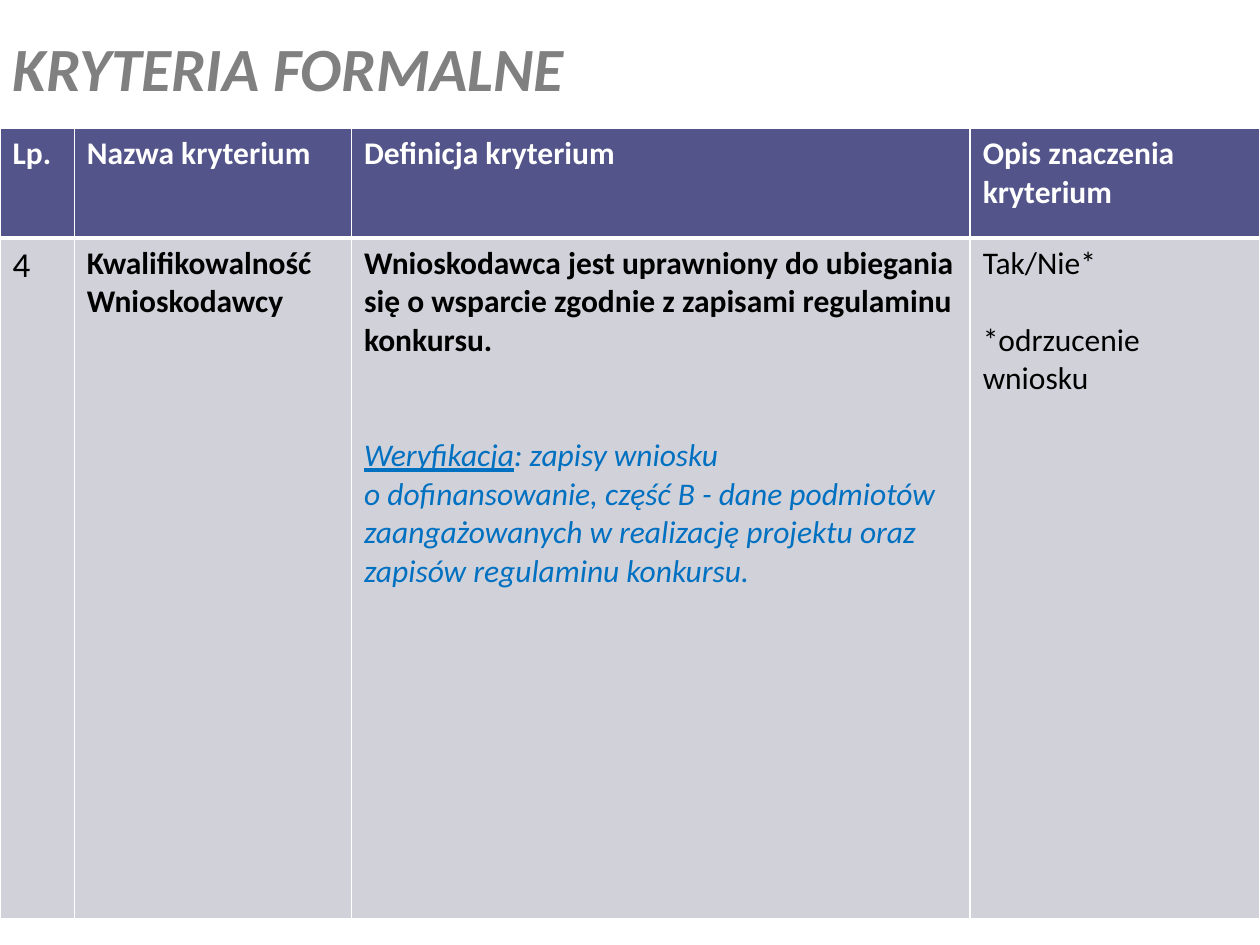
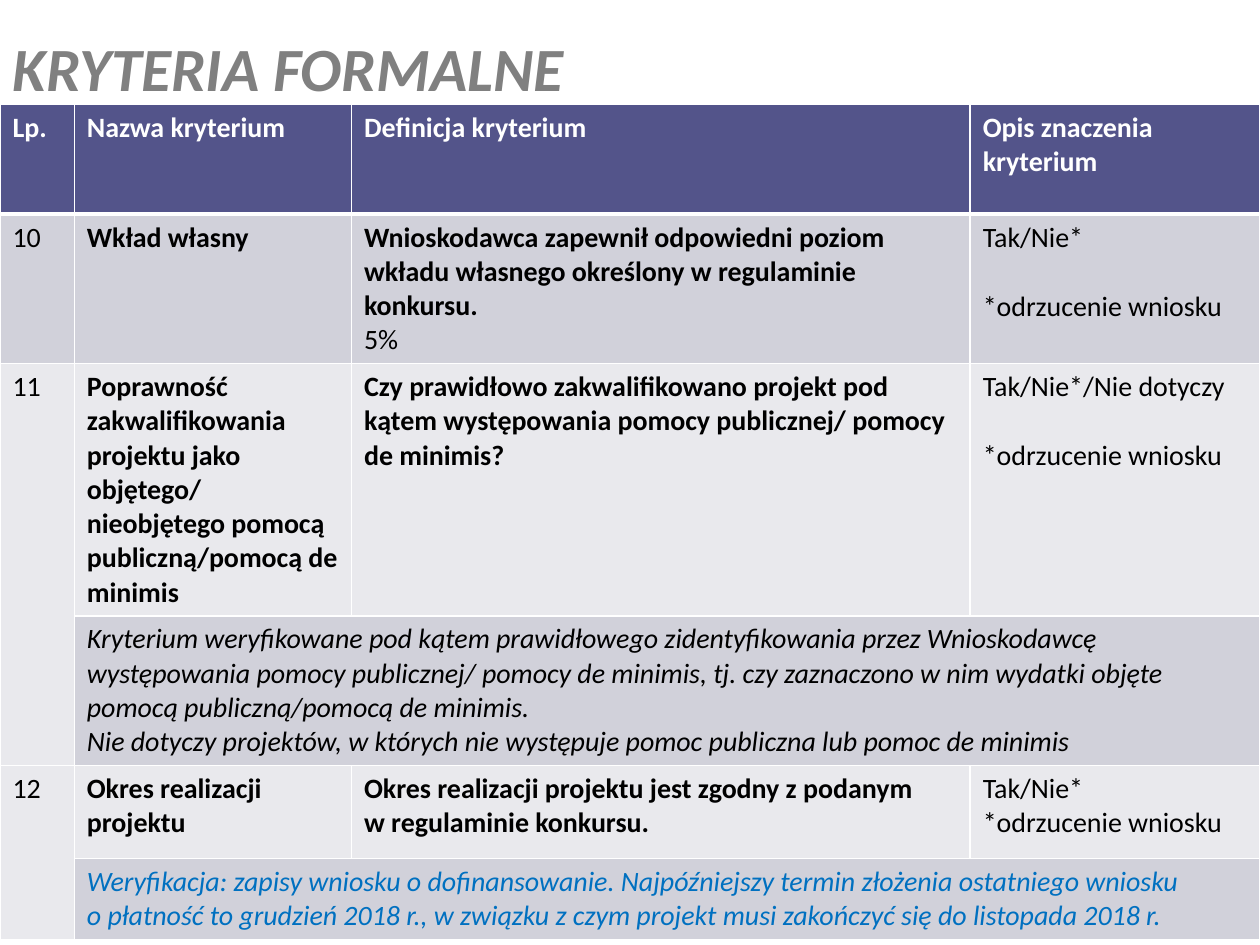
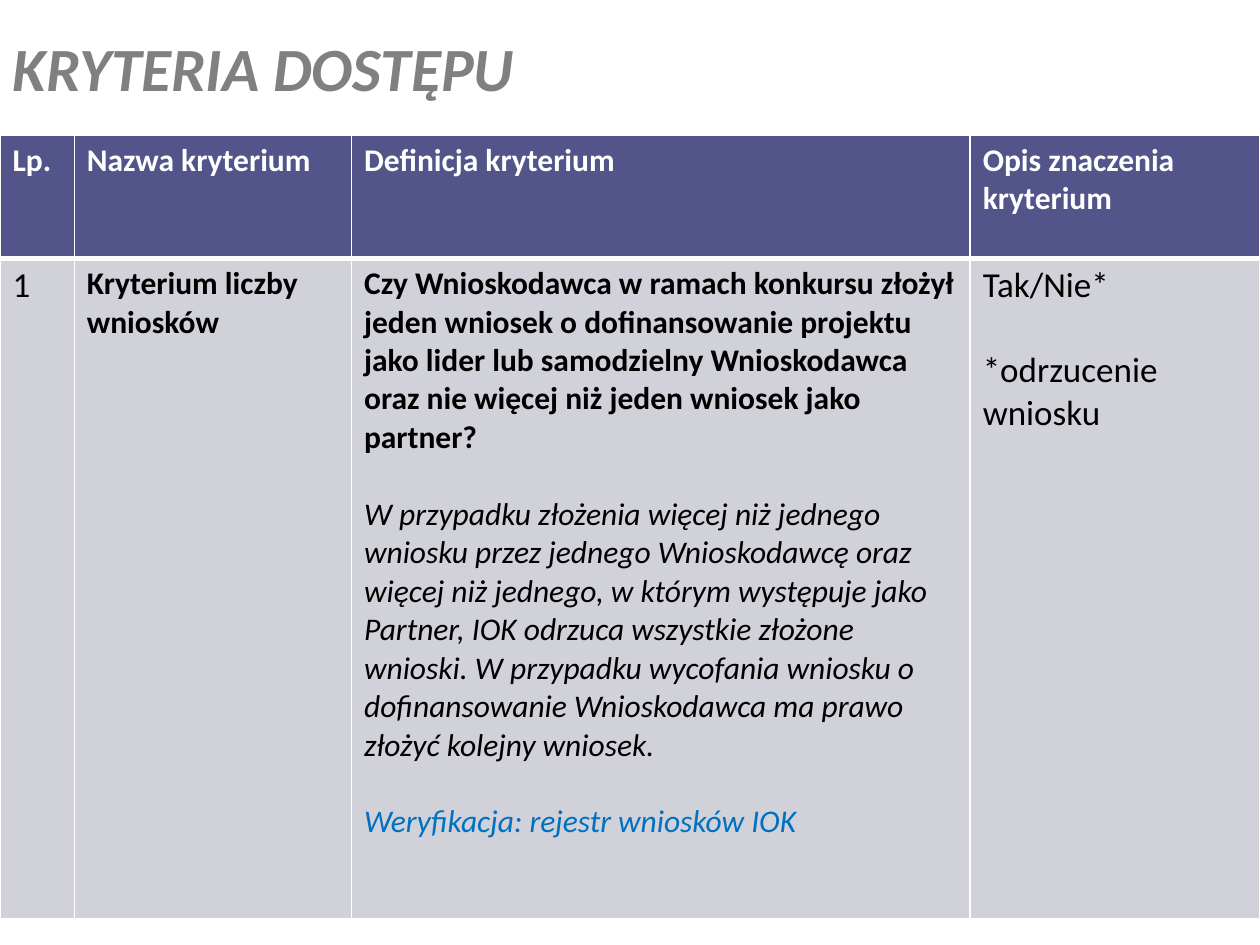
from dataclasses import dataclass
from typing import Optional

from lxml.etree import SubElement
from pptx import Presentation
from pptx.dml.color import RGBColor
from pptx.enum.text import MSO_ANCHOR, MSO_AUTO_SIZE, PP_ALIGN
from pptx.oxml.ns import qn
from pptx.util import Inches, Pt

# Shared style
FONT = "Calibri"
WHITE = RGBColor(0xFF, 0xFF, 0xFF)
BLACK = RGBColor(0x00, 0x00, 0x00)
GREY = RGBColor(0x80, 0x80, 0x80)
BLUE = RGBColor(0x00, 0x70, 0xC0)
HEADER_FILL = RGBColor(0x53, 0x54, 0x8A)
ODD_FILL = RGBColor(0xD1, 0xD1, 0xDA)
EVEN_FILL = RGBColor(0xE9, 0xE9, 0xED)

TITLE_SIZE = 35.1
LINE_HEIGHT = 1.22  # line height of the font relative to its size
COLUMN_WIDTHS = (0.59, 2.2, 4.91, 2.3)
HEADERS = ("Lp.", "Nazwa kryterium", "Definicja kryterium",
           "Opis znaczenia kryterium")


@dataclass(frozen=True)
class Span:
    text: str
    bold: bool = False
    italic: bool = False
    underline: bool = False
    color: RGBColor = BLACK


@dataclass(frozen=True)
class Para:
    spans: tuple[Span, ...]
    gap_lines: int = 0  # empty lines' worth of space before


@dataclass(frozen=True)
class Entry:
    paras: tuple[Para, ...]
    size: Optional[float] = None  # defaults to the table's text size
    row_span: int = 1
    column_span: int = 1


@dataclass(frozen=True)
class CriteriaSlide:
    title: str
    top: float
    size: float
    row_heights: tuple[float, ...]
    rows: tuple[tuple[Optional[Entry], ...], ...]  # None is a merged-over cell


# Content helpers
def para(text: str, gap_lines: int = 0, bold: bool = False,
         italic: bool = False, color: RGBColor = BLACK) -> Para:
    return Para((Span(text, bold, italic, color=color),), gap_lines)


def plain(text: str, size: Optional[float] = None, row_span: int = 1) -> Entry:
    return Entry((para(text),), size, row_span)


def strong(text: str) -> Entry:
    return Entry((para(text, bold=True),))


def note(*paras: Para) -> Entry:
    return Entry(paras, column_span=3)


def verdict(answer: str = "Tak/Nie*", gap_lines: int = 1,
            size: Optional[float] = None) -> Entry:
    return Entry((para(answer), para("*odrzucenie wniosku", gap_lines)), size)


HEADER_ROW = tuple(Entry((para(text, bold=True, color=WHITE),))
                   for text in HEADERS)

SLIDES = (
    CriteriaSlide("KRYTERIA FORMALNE", 1.02, 18, (0.87, 5.4), ((
        plain("4", size=20),
        strong("Kwalifikowalność Wnioskodawcy"),
        Entry((
            para("Wnioskodawca jest uprawniony do ubiegania się o wsparcie "
                 "zgodnie z zapisami regulaminu konkursu.", bold=True),
            Para((
                Span("Weryfikacja", italic=True, underline=True, color=BLUE),
                Span(": zapisy wniosku\no dofinansowanie, część B - dane "
                     "podmiotów zaangażowanych w realizację projektu oraz "
                     "zapisów regulaminu konkursu.", italic=True, color=BLUE),
            ), gap_lines=2),
        )),
        verdict(),
    ),)),
    CriteriaSlide(
        "KRYTERIA FORMALNE", 0.83, 16, (0.87, 1.1, 1.94, 0.91, 0.74, 0.59), (
            (
                plain("10"),
                strong("Wkład własny"),
                Entry((
                    para("Wnioskodawca zapewnił odpowiedni poziom wkładu "
                         "własnego określony w regulaminie konkursu.",
                         bold=True),
                    para("5%"),
                )),
                verdict(),
            ),
            (
                plain("11", row_span=2),
                strong("Poprawność zakwalifikowania projektu jako objętego/ "
                       "nieobjętego pomocą publiczną/pomocą de minimis"),
                strong("Czy prawidłowo zakwalifikowano projekt pod kątem "
                       "występowania pomocy publicznej/ pomocy de minimis?"),
                verdict("Tak/Nie*/Nie dotyczy"),
            ),
            (
                None,
                note(
                    para("Kryterium weryfikowane pod kątem prawidłowego "
                         "zidentyfikowania przez Wnioskodawcę występowania "
                         "pomocy publicznej/ pomocy de minimis, tj. czy "
                         "zaznaczono w nim wydatki objęte pomocą "
                         "publiczną/pomocą de minimis.", italic=True),
                    para("Nie dotyczy projektów, w których nie występuje "
                         "pomoc publiczna lub pomoc de minimis", italic=True),
                ),
                None, None,
            ),
            (
                plain("12", row_span=2),
                strong("Okres realizacji projektu"),
                strong("Okres realizacji projektu jest zgodny z podanym\n"
                       "w regulaminie konkursu."),
                verdict(gap_lines=0),
            ),
            (
                None,
                note(para("Weryfikacja: zapisy wniosku o dofinansowanie. "
                          "Najpóźniejszy termin złożenia ostatniego wniosku\n"
                          "o płatność to grudzień 2018 r., w związku z czym "
                          "projekt musi zakończyć się do listopada 2018 r.",
                          italic=True, color=BLUE)),
                None, None,
            ),
        )),
    CriteriaSlide("KRYTERIA DOSTĘPU", 1.07, 18, (0.98, 5.24), ((
        plain("1", size=20),
        strong("Kryterium liczby wniosków"),
        Entry((
            para("Czy Wnioskodawca w ramach konkursu złożył jeden wniosek "
                 "o dofinansowanie projektu jako lider lub samodzielny "
                 "Wnioskodawca oraz nie więcej niż jeden wniosek jako "
                 "partner?", bold=True),
            para("W przypadku złożenia więcej niż jednego wniosku przez "
                 "jednego Wnioskodawcę oraz więcej niż jednego, w którym "
                 "występuje jako Partner, IOK odrzuca wszystkie złożone "
                 "wnioski. W przypadku wycofania wniosku "
                 "o dofinansowanie Wnioskodawca ma prawo złożyć kolejny "
                 "wniosek.", gap_lines=1, italic=True),
            para("Weryfikacja: rejestr wniosków IOK", gap_lines=1,
                 italic=True, color=BLUE),
        )),
        verdict(size=20),
    ),)),
)


# Drawing
def add_span(paragraph, span: Span, size: float) -> None:
    for index, line in enumerate(span.text.split("\n")):
        if index:
            paragraph.add_line_break()
        run = paragraph.add_run()
        run.text = line
        font = run.font
        font.name, font.size = FONT, Pt(size)
        font.bold, font.italic = span.bold, span.italic
        font.underline = span.underline
        font.color.rgb = span.color


def write_entry(cell, entry: Entry, table_size: float) -> None:
    size = entry.size or table_size
    frame = cell.text_frame
    for index, item in enumerate(entry.paras):
        paragraph = frame.add_paragraph() if index else frame.paragraphs[0]
        if item.gap_lines:
            paragraph.space_before = Pt(round(item.gap_lines * size * LINE_HEIGHT))
        for span in item.spans:
            add_span(paragraph, span, size)


def set_borders(cell, row: int) -> None:
    """White rules, heavier between the header and the body."""
    widths = {"L": 1, "R": 1, "T": 3 if row == 1 else 1, "B": 3 if row == 0 else 1}
    properties = cell._tc.get_or_add_tcPr()
    for side, width in widths.items():
        line = SubElement(properties, qn(f"a:ln{side}"), w=str(Pt(width)))
        fill = SubElement(line, qn("a:solidFill"))
        SubElement(fill, qn("a:srgbClr"), val=str(WHITE))


def row_fill(row: int) -> RGBColor:
    if row == 0:
        return HEADER_FILL
    return ODD_FILL if row % 2 else EVEN_FILL


def add_title(page, text: str) -> None:
    title = page.shapes.title
    title.left, title.top = Inches(0), Inches(0)
    title.width, title.height = Inches(9.5), Inches(1.07)
    frame = title.text_frame
    frame.word_wrap = True
    frame.auto_size = MSO_AUTO_SIZE.NONE
    frame.vertical_anchor = MSO_ANCHOR.MIDDLE
    paragraph = frame.paragraphs[0]
    paragraph.alignment = PP_ALIGN.LEFT
    add_span(paragraph, Span(text, bold=True, italic=True, color=GREY), TITLE_SIZE)


def add_criteria_table(page, content: CriteriaSlide) -> None:
    heights = content.row_heights
    table = page.shapes.add_table(
        len(heights), len(COLUMN_WIDTHS), Inches(0), Inches(content.top),
        Inches(sum(COLUMN_WIDTHS)), Inches(sum(heights))).table
    for column, width in zip(table.columns, COLUMN_WIDTHS):
        column.width = Inches(width)
    for table_row, height in zip(table.rows, heights):
        table_row.height = Inches(height)

    for row, entries in enumerate((HEADER_ROW, *content.rows)):
        for column, entry in enumerate(entries):
            cell = table.cell(row, column)
            set_borders(cell, row)
            cell.fill.solid()
            cell.fill.fore_color.rgb = row_fill(row)
            if entry is None:
                continue
            if entry.row_span > 1 or entry.column_span > 1:
                cell.merge(table.cell(row + entry.row_span - 1,
                                      column + entry.column_span - 1))
            write_entry(cell, entry, content.size)


def main() -> None:
    deck = Presentation()
    deck.slide_width, deck.slide_height = Inches(10), Inches(7.5)
    title_only = deck.slide_layouts[5]
    for content in SLIDES:
        page = deck.slides.add_slide(title_only)
        add_title(page, content.title)
        add_criteria_table(page, content)
    deck.save("out.pptx")


if __name__ == "__main__":
    main()
